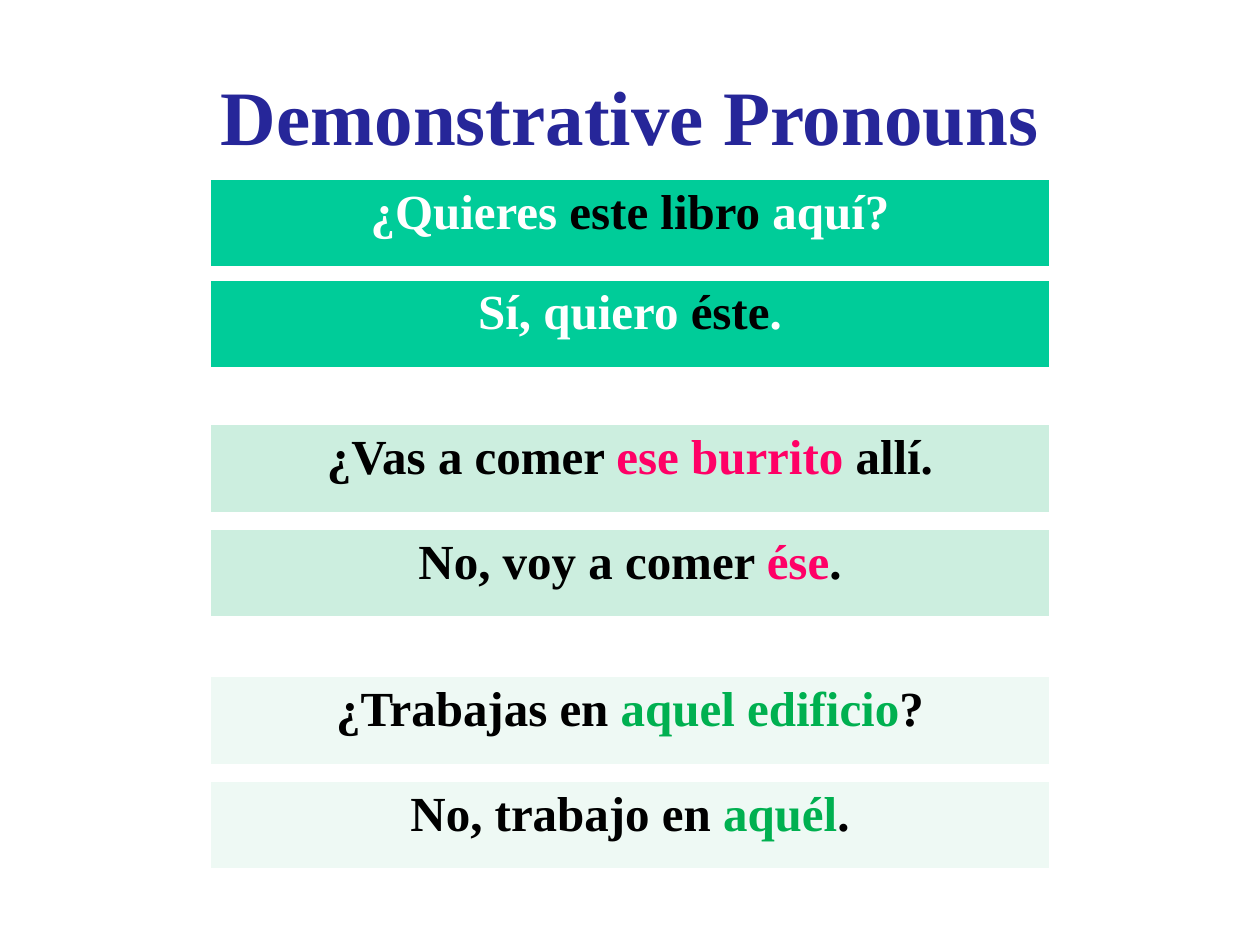
"""Build the Demonstrative Pronouns slide with three question-and-answer pairs."""
import lxml.etree
import pptx
import pptx.dml.color
import pptx.enum.text
import pptx.oxml.ns
import pptx.util

Cm = pptx.util.Cm
Pt = pptx.util.Pt
RGBColor = pptx.dml.color.RGBColor

WHITE = RGBColor(0xFF, 0xFF, 0xFF)
BLACK = RGBColor(0x00, 0x00, 0x00)
NAVY = RGBColor(0x26, 0x26, 0x99)
PINK = RGBColor(0xFF, 0x00, 0x66)
GREEN = RGBColor(0x00, 0xB0, 0x50)
TEAL = RGBColor(0x00, 0xCC, 0x99)
MINT = RGBColor(0xCC, 0xEE, 0xDF)
PALE = RGBColor(0xEE, 0xF9, 0xF4)

TITLE = "Demonstrative Pronouns"
PAIRS = [
    {"fill": TEAL, "plain": WHITE, "accent": BLACK, "tops": (3.61, 5.64),
     "sentences": [("¿Quieres ", "este libro ", "aquí?"),
                   ("Sí, quiero ", "éste", ".")]},
    {"fill": MINT, "plain": BLACK, "accent": PINK, "tops": (8.56, 10.67),
     "sentences": [("¿Vas a comer ", "ese burrito ", "allí."),
                   ("No, voy a comer ", "ése", ".")]},
    {"fill": PALE, "plain": BLACK, "accent": GREEN, "tops": (13.64, 15.75),
     "sentences": [("¿Trabajas en ", "aquel edificio", "?"),
                   ("No, trabajo en ", "aquél", ".")]},
]
LEFT, WIDTH, HEIGHT = 4.23, 16.94, 1.8
BORDERS = {"lnL": 1, "lnR": 1, "lnT": 1, "lnB": 3}
FONT = {"name": "Times New Roman", "bold": True}


def add_words(paragraph, words, size, color):
    run = paragraph.add_run()
    run.text = words
    for attribute, value in {**FONT, "size": Pt(size)}.items():
        setattr(run.font, attribute, value)
    run.font.color.rgb = color


def add_borders(cell):
    qn = pptx.oxml.ns.qn
    properties = cell._tc.get_or_add_tcPr()
    for side, points in BORDERS.items():
        border = lxml.etree.SubElement(properties, qn(f"a:{side}"), w=str(Pt(points)))
        paint = lxml.etree.SubElement(border, qn("a:solidFill"))
        lxml.etree.SubElement(paint, qn("a:srgbClr"), val=str(WHITE))


def add_sentence(slide, top, parts, pair):
    table = slide.shapes.add_table(
        1, 1, Cm(LEFT), Cm(top), Cm(WIDTH), Cm(HEIGHT)).table
    cell = table.cell(0, 0)
    add_borders(cell)
    cell.fill.solid()
    cell.fill.fore_color.rgb = pair["fill"]
    sentence = cell.text_frame.paragraphs[0]
    sentence.alignment = pptx.enum.text.PP_ALIGN.CENTER
    for words, role in zip(parts, ("plain", "accent", "plain")):
        add_words(sentence, words, 28, pair[role])


def main():
    deck = pptx.Presentation()
    deck.slide_width, deck.slide_height = Cm(25.4), Cm(19.05)
    slide = deck.slides.add_slide(deck.slide_layouts[5])

    title = slide.shapes.title
    title_box = {"left": 1.75, "top": 1.02, "width": 21.9, "height": 2.59}
    for attribute, value in title_box.items():
        setattr(title, attribute, Cm(value))
    title.text_frame.vertical_anchor = pptx.enum.text.MSO_ANCHOR.MIDDLE
    heading = title.text_frame.paragraphs[0]
    heading.alignment = pptx.enum.text.PP_ALIGN.CENTER
    add_words(heading, TITLE, 44, NAVY)

    for pair in PAIRS:
        for top, parts in zip(pair["tops"], pair["sentences"]):
            add_sentence(slide, top, parts, pair)

    deck.save("out.pptx")


if __name__ == "__main__":
    main()
